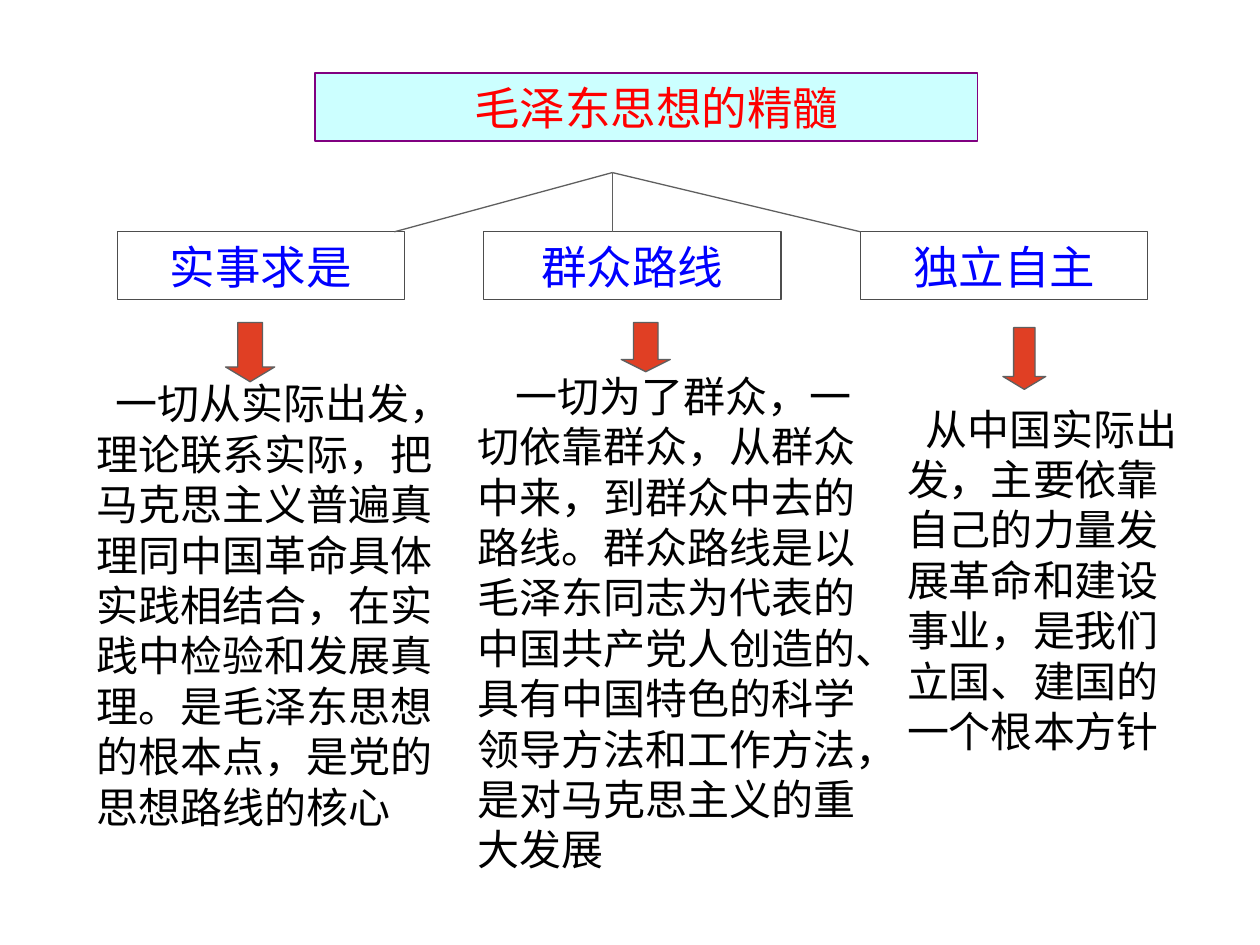
"""Build a slide on three core principles, each with a heading, an arrow and an explanation."""
from lxml.etree import SubElement
from pptx import Presentation
from pptx.dml.color import RGBColor
from pptx.enum.shapes import MSO_CONNECTOR as Connector, MSO_SHAPE as Shape
from pptx.enum.text import MSO_ANCHOR as Anchor, MSO_AUTO_SIZE as AutoSize, PP_ALIGN as Align
from pptx.oxml.ns import qn
from pptx.util import Inches, Pt

FONT = "Noto Sans CJK SC"
RED = RGBColor(0xFF, 0x00, 0x00)
BLUE = RGBColor(0x00, 0x00, 0xFF)
BLACK = RGBColor(0x00, 0x00, 0x00)
PALE_CYAN = RGBColor(0xCC, 0xFF, 0xFF)
PURPLE = RGBColor(0x80, 0x00, 0x80)
DARK_GRAY = RGBColor(0x4D, 0x4D, 0x4D)
GRAY = RGBColor(0x5F, 0x5F, 0x5F)
ARROW_RED = RGBColor(0xE0, 0x3F, 0x24)


def write(shape, text, size=26, color=BLUE, align=Align.CENTER, anchor=Anchor.MIDDLE, indent=0):
    frame = shape.text_frame
    frame.word_wrap = True
    frame.auto_size = AutoSize.NONE
    frame.vertical_anchor = anchor
    paragraph = frame.paragraphs[0]
    paragraph.alignment = align
    paragraph.space_before = Pt(0)
    paragraph.line_spacing = Pt(size * 1.2)
    if indent:
        paragraph._p.get_or_add_pPr().set("indent", str(Inches(indent)))
    run = paragraph.add_run()
    run.text = text
    run.font.name = FONT
    run.font.size = Pt(size)
    run.font.color.rgb = color
    SubElement(run.font._element, qn("a:ea")).set("typeface", FONT)


def outline(shape, color):
    shape.line.color.rgb = color
    shape.line.width = Pt(0.75)


prs = Presentation()
prs.slide_width, prs.slide_height = Inches(10), Inches(7.5)
slide = prs.slides.add_slide(prs.slide_layouts[5])
shapes = slide.shapes

title = shapes.title
title.left, title.top = Inches(2.5), Inches(0.58)
title.width, title.height = Inches(5.26), Inches(0.54)
title.fill.solid()
title.fill.fore_color.rgb = PALE_CYAN
outline(title, PURPLE)
write(title, "毛泽东思想的精髓", color=RED)
title.text_frame.margin_left = Inches(0.26)

BRANCH_TOP = 1.84
principles = [
    ("实事求是", 0.93, 2.28, 3.13, (1.79, 2.56, 0.39, 0.47), 0.3, (0.67, 2.95, 2.98, 3.74), 0.15,
     "一切从实际出发，理论联系实际，把马克思主义普遍真理同中国革命具体实践相结合，"
     "在实践中检验和发展真理。是毛泽东思想的根本点，是党的思想路线的核心"),
    ("群众路线", 3.84, 2.36, 4.86, (4.93, 2.56, 0.39, 0.39), 0.25, (3.69, 2.89, 3.31, 4.14), 0.3,
     "一切为了群众，一切依靠群众，从群众中来，到群众中去的路线。"
     "群众路线是以毛泽东同志为代表的中国共产党人创造的、"
     "具有中国特色的科学领导方法和工作方法，是对马克思主义的重大发展"),
    ("独立自主", 6.83, 2.28, 6.83, (7.96, 2.6, 0.34, 0.49), 0.3, (7.1, 3.15, 2.52, 2.93), 0.15,
     "从中国实际出发，主要依靠自己的力量发展革命和建设事业，"
     "是我们立国、建国的一个根本方针"),
]

for name, left, width, branch_end, arrow_box, head, meaning_box, indent, meaning in principles:
    heading = shapes.add_shape(Shape.RECTANGLE, Inches(left), Inches(BRANCH_TOP),
                               Inches(width), Inches(0.54))
    heading.shadow.inherit = False
    heading.fill.background()
    outline(heading, DARK_GRAY)
    write(heading, name)

    branch = shapes.add_connector(Connector.STRAIGHT, Inches(4.86), Inches(1.37),
                                  Inches(branch_end), Inches(BRANCH_TOP))
    outline(branch, GRAY)
    SubElement(branch._element.spPr, qn("a:effectLst"))

    explanation = shapes.add_textbox(*map(Inches, meaning_box))
    write(explanation, meaning, size=24, color=BLACK, align=Align.LEFT,
          anchor=Anchor.TOP, indent=indent)

    arrow = shapes.add_shape(Shape.DOWN_ARROW, *map(Inches, arrow_box))
    arrow.shadow.inherit = False
    arrow.adjustments[1] = head
    arrow.fill.solid()
    arrow.fill.fore_color.rgb = ARROW_RED
    outline(arrow, GRAY)

prs.save("out.pptx")
